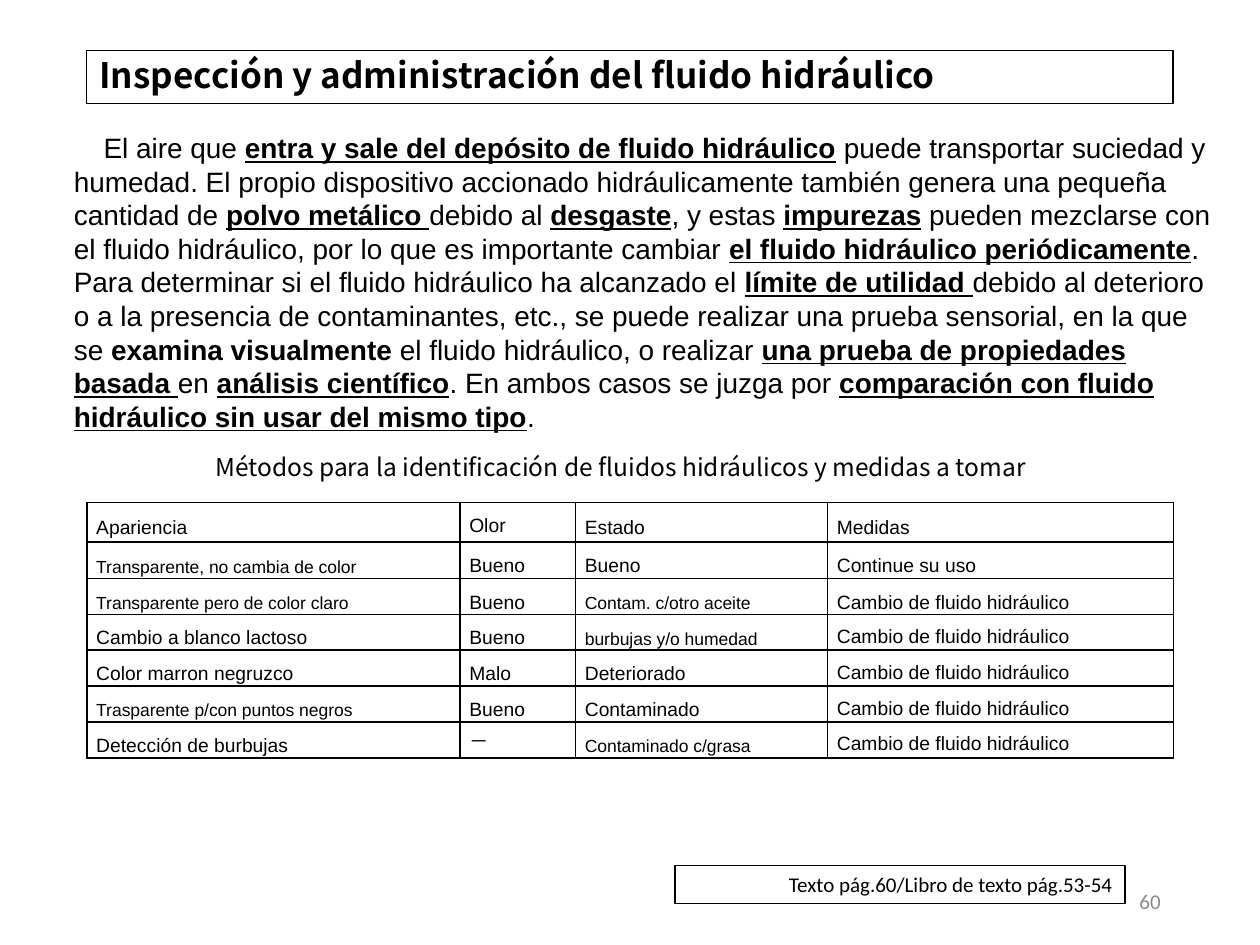
"""Build the slide on hydraulic fluid inspection."""
from dataclasses import dataclass

from lxml.etree import SubElement
from pptx import Presentation
from pptx.dml.color import RGBColor
from pptx.enum.shapes import MSO_SHAPE
from pptx.enum.text import MSO_ANCHOR, MSO_AUTO_SIZE, PP_ALIGN
from pptx.oxml.ns import qn
from pptx.util import Cm, Pt

BLACK = "000000"
NOTO = "Noto Sans CJK JP"


@dataclass
class Box:
    left: float
    top: float
    width: float
    height: float

    def place(self) -> tuple:
        return Cm(self.left), Cm(self.top), Cm(self.width), Cm(self.height)


@dataclass
class Style:
    font: str
    size: float
    hue: str = BLACK
    bold: bool = False
    align: PP_ALIGN = PP_ALIGN.LEFT


@dataclass
class Bit:
    text: str
    bold: bool = False
    line: bool = False


def color(hue: str) -> RGBColor:
    return RGBColor.from_string(hue)


def key(text: str) -> Bit:
    return Bit(text, True, True)


def format_para(para, style: Style) -> None:
    para.alignment = style.align
    font = para.font
    font.name, font.size, font.bold = style.font, Pt(style.size), style.bold
    font.color.rgb = color(style.hue)


def fill_text(frame, lines: list[list[Bit]], style: Style, anchor=MSO_ANCHOR.TOP) -> None:
    frame.word_wrap = True
    frame.auto_size = MSO_AUTO_SIZE.NONE
    frame.vertical_anchor = anchor
    for i, bits in enumerate(lines):
        para = frame.add_paragraph() if i else frame.paragraphs[0]
        format_para(para, style)
        for bit in bits:
            run = para.add_run()
            run.text = bit.text
            if bit.bold:
                run.font.bold = True
            if bit.line:
                run.font.underline = True


def add_text(slide, box: Box, lines: list[list[Bit]], style: Style, anchor=MSO_ANCHOR.TOP):
    shape = slide.shapes.add_textbox(*box.place())
    fill_text(shape.text_frame, lines, style, anchor)
    return shape


def frame_box(shape) -> None:
    shape.line.color.rgb = color(BLACK)
    shape.line.width = Pt(0.75)


def add_title(slide, box: Box, text: str) -> None:
    title = slide.shapes.title
    title.left, title.top, title.width, title.height = box.place()
    fill_text(title.text_frame, [[Bit(text)]], Style(NOTO, 20, bold=True), MSO_ANCHOR.MIDDLE)
    title.text_frame.paragraphs[0].line_spacing = 0.9
    frame_box(title)


def add_source(slide, box: Box, text: str) -> None:
    shape = slide.shapes.add_shape(MSO_SHAPE.RECTANGLE, *box.place())
    shape.shadow.inherit = False
    shape.fill.background()
    frame_box(shape)
    fill_text(shape.text_frame, [[Bit(text)]], Style("Calibri", 12, align=PP_ALIGN.RIGHT))


def add_edges(cell) -> None:
    props = cell._tc.get_or_add_tcPr()
    for side in ("lnL", "lnR", "lnT", "lnB"):
        edge = SubElement(props, qn(f"a:{side}"), w=str(Pt(1)))
        SubElement(SubElement(edge, qn("a:solidFill")), qn("a:srgbClr"), val=BLACK)


def add_grid(slide, box: Box, widths: list[float], heights: list[float], rows: list[list[str]]) -> None:
    table = slide.shapes.add_table(len(rows), len(widths), *box.place()).table
    table.first_row = table.horz_banding = False
    for col, width in zip(table.columns, widths):
        col.width = Cm(width)
    for row, height in zip(table.rows, heights):
        row.height = Cm(height)
    for r, texts in enumerate(rows):
        for c, text in enumerate(texts):
            cell = table.cell(r, c)
            cell.margin_left = cell.margin_right = Cm(0.19)
            cell.margin_top = cell.margin_bottom = 0
            high = c == 3 and r > 2
            cell.vertical_anchor = MSO_ANCHOR.TOP if high else MSO_ANCHOR.MIDDLE
            para = cell.text_frame.paragraphs[0]
            para.text = text
            size = 10 if (r, c) in SMALL else 11
            format_para(para, Style("Arial", size, align=PP_ALIGN.JUSTIFY))
            para.line_spacing = Pt(16 if (r, c) in TIGHT else 19)
            add_edges(cell)
            cell.fill.background()


SMALL = {(1, 0), (2, 0), (5, 0), (2, 2), (3, 2), (6, 2)}
TIGHT = {(0, 1), (6, 1)}
CHANGE = "Cambio de fluido hidráulico"
ROWS = [
    ["Apariencia", "Olor", "Estado", "Medidas"],
    ["Transparente, no cambia de color", "Bueno", "Bueno", "Continue su uso"],
    ["Transparente pero de color claro", "Bueno", "Contam. c/otro aceite", CHANGE],
    ["Cambio a blanco lactoso", "Bueno", "burbujas y/o humedad", CHANGE],
    ["Color marron negruzco", "Malo", "Deteriorado", CHANGE],
    ["Trasparente p/con puntos negros", "Bueno", "Contaminado", CHANGE],
    ["Detección de burbujas", "－", "Contaminado c/grasa", CHANGE],
]
BODY = [
    [
        Bit("El aire que "),
        key("entra y sale del depósito de fluido hidráulico"),
        Bit(" puede transportar suciedad y humedad. El propio dispositivo accionado "
            "hidráulicamente también genera una pequeña cantidad de "),
        key("polvo metálico "),
        Bit("debido al "),
        key("desgaste"),
        Bit(", y estas "),
        key("impurezas"),
        Bit(" pueden mezclarse con el fluido hidráulico, por lo que es importante cambiar "),
        key("el fluido hidráulico periódicamente"),
        Bit("."),
    ],
    [
        Bit("Para determinar si el fluido hidráulico ha alcanzado el "),
        key("límite de utilidad "),
        Bit("debido al deterioro o a la presencia de contaminantes, etc., se puede "
            "realizar una prueba sensorial, en la que se "),
        Bit("examina visualmente ", bold=True),
        Bit("el fluido hidráulico, o realizar "),
        key("una prueba de propiedades basada "),
        Bit("en "),
        key("análisis científico"),
        Bit(". En ambos casos se juzga por "),
        key("comparación con fluido hidráulico sin usar del mismo tipo"),
        Bit("."),
    ],
]


def main() -> None:
    deck = Presentation()
    deck.slide_width, deck.slide_height = Cm(25.4), Cm(19.05)
    slide = deck.slides.add_slide(deck.slide_layouts[5])
    add_title(slide, Box(1.75, 1.02, 21.9, 1.07), "Inspección y administración del fluido hidráulico")
    add_text(slide, Box(17.93, 17.65, 5.72, 1.02), [[Bit("60")]],
             Style("Calibri", 12, "8C8C8C", align=PP_ALIGN.RIGHT), MSO_ANCHOR.MIDDLE)
    body = add_text(slide, Box(1.24, 2.51, 23.65, 6.35), BODY, Style("Arial", 16))
    first = body.text_frame.paragraphs[0]
    first._p.get_or_add_pPr().set("indent", str(Cm(0.6)))
    add_text(slide, Box(4.09, 8.99, 19.08, 0.86),
             [[Bit("Métodos para la identificación de fluidos hidráulicos y medidas a tomar")]],
             Style(NOTO, 14))
    add_source(slide, Box(13.61, 17.45, 9.07, 0.77), "Texto pág.60/Libro de texto pág.53-54")
    add_grid(slide, Box(1.75, 10.13, 21.9, 5.15), [7.52, 2.33, 5.08, 6.98],
             [0.8, 0.73, 0.73, 0.71, 0.73, 0.72, 0.73], ROWS)
    deck.save("out.pptx")


if __name__ == "__main__":
    main()
